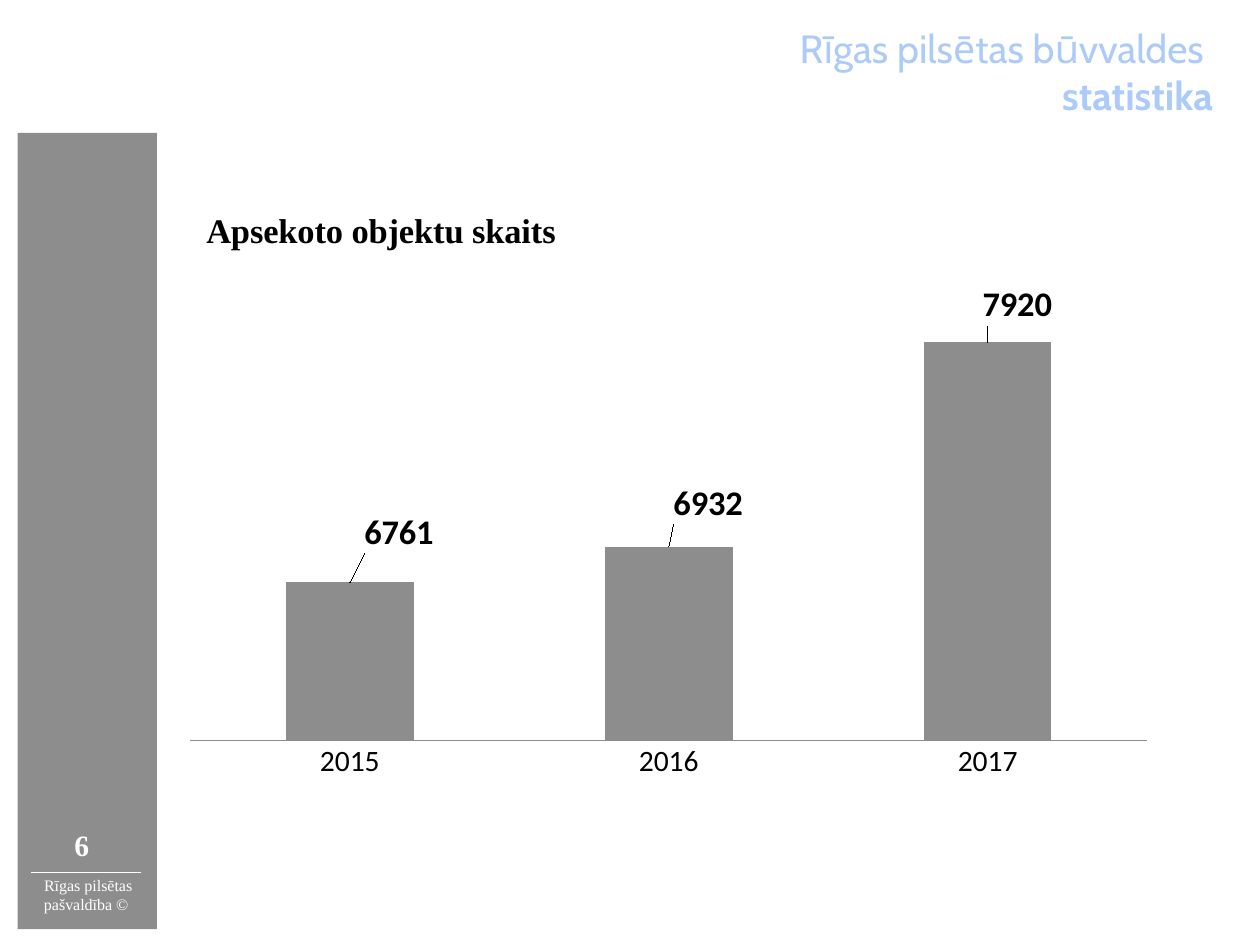
"""Build the slide on the number of surveyed objects per year."""
import pptx
import pptx.chart.data
import pptx.dml.color
import pptx.enum.chart
import pptx.enum.shapes
import pptx.enum.text
import pptx.oxml
import pptx.oxml.ns
import pptx.util

Inches = pptx.util.Inches
COLORS = {"grey": "8C8D8C", "white": "FFFFFF", "blue": "ACCBF9", "black": "000000"}
SERIF = "Times New Roman"


def style(font, name, size, color, bold=False):
    font.name, font.size, font.bold = name, pptx.util.Pt(size), bold
    font.color.rgb = pptx.dml.color.RGBColor.from_string(COLORS[color])


def layout(x, y, w=None, h=None):
    tags = ""
    if w is not None:
        tags = '<c:layoutTarget val="inner"/>'
    if w is not None or y > 0:
        tags += '<c:xMode val="edge"/><c:yMode val="edge"/>'
    for tag, value in zip("xywh", (x, y, w, h)):
        if value is not None:
            tags += f'<c:{tag} val="{value}"/>'
    return pptx.oxml.parse_xml(
        f'<c:layout {pptx.oxml.ns.nsdecls("c")}><c:manualLayout>{tags}</c:manualLayout></c:layout>')


prs = pptx.Presentation()
prs.slide_width, prs.slide_height = Inches(14.22), Inches(10.67)
s = prs.slides.add_slide(prs.slide_layouts[5])

bar = s.shapes.add_shape(pptx.enum.shapes.MSO_SHAPE.RECTANGLE,
                         Inches(0.2), Inches(1.5), Inches(1.57), Inches(8.99))
bar.shadow.inherit = False
bar.fill.solid()
bar.fill.fore_color.rgb = pptx.dml.color.RGBColor.from_string(COLORS["grey"])
bar.line.fill.background()

footer = s.shapes.add_textbox(Inches(0.21), Inches(9.88), Inches(1.57), Inches(0.44))
tf = footer.text_frame
tf.word_wrap = True
tf.margin_left = tf.margin_right = tf.margin_top = tf.margin_bottom = 0
tf.vertical_anchor = pptx.enum.text.MSO_ANCHOR.MIDDLE
p = tf.paragraphs[0]
p.text = "Rīgas pilsētas pašvaldība © "
p.alignment = pptx.enum.text.PP_ALIGN.CENTER
style(p.runs[0].font, SERIF, 13, "white")

rule = s.shapes.add_connector(pptx.enum.shapes.MSO_CONNECTOR.STRAIGHT,
                              Inches(0.35), Inches(9.85), Inches(1.59), Inches(9.85))
rule.line.color.rgb = pptx.dml.color.RGBColor.from_string(COLORS["white"])
rule.line.width = pptx.util.Pt(1)
rule._element.spPr.append(
    pptx.oxml.parse_xml(f'<a:effectLst {pptx.oxml.ns.nsdecls("a")}/>'))

title = s.shapes.title
title.left, title.top, title.width, title.height = (
    Inches(2.86), Inches(0.21), Inches(10.89), Inches(1.42))
tf = title.text_frame
tf.margin_left = tf.margin_right = tf.margin_top = tf.margin_bottom = Inches(0.06)
tf.auto_size = pptx.enum.text.MSO_AUTO_SIZE.NONE
tf.vertical_anchor = pptx.enum.text.MSO_ANCHOR.TOP
p = tf.paragraphs[0]
p.text = "Rīgas pilsētas būvvaldes \vstatistika"
p.alignment = pptx.enum.text.PP_ALIGN.RIGHT
for r, bold in zip(p.runs, (False, True)):
    style(r.font, "Cabin", 32, "blue", bold)

number = s.shapes.add_textbox(Inches(0.74), Inches(9.29), Inches(0.46), Inches(0.51))
tf = number.text_frame
tf.word_wrap = False
p = tf.paragraphs[0]
p.text = "6"
style(p.runs[0].font, SERIF, 24, "white", True)

data = pptx.chart.data.CategoryChartData()
data.categories = ["2015", "2016", "2017"]
data.add_series("Series 1", (6761, 6932, 7920))
chart = s.shapes.add_chart(
    pptx.enum.chart.XL_CHART_TYPE.COLUMN_CLUSTERED,
    Inches(2.07), Inches(2.1), Inches(11.1), Inches(7.09), data).chart
style(chart.font, SERIF, 10, "black")
chart.has_legend = False

p = chart.chart_title.text_frame.paragraphs[0]
p.text = "Apsekoto objektu skaits"
style(p.runs[0].font, SERIF, 28, "black", True)
heading = chart.chart_title._element
heading.find(pptx.oxml.ns.qn("c:tx")).addnext(layout(0.017, 0.027))
for old in heading.findall(pptx.oxml.ns.qn("c:layout"))[1:]:
    heading.remove(old)
chart.chart_title.include_in_layout = False

plot_area = chart._chartSpace.chart.plotArea
for old in plot_area.findall(pptx.oxml.ns.qn("c:layout")):
    plot_area.remove(old)
plot_area.insert(0, layout(0.007, 0.057, 0.973, 0.826))

years = chart.category_axis
years.major_tick_mark = pptx.enum.chart.XL_TICK_MARK.NONE
style(years.tick_labels.font, "Calibri", 24, "black")
years.format.line.color.rgb = pptx.dml.color.RGBColor.from_string(COLORS["grey"])
values = chart.value_axis
values.minimum_scale, values.maximum_scale = 6000, 8500
values.has_major_gridlines = False
values.visible = False

plot = chart.plots[0]
plot.gap_width = 150
plot.vary_by_categories = False
series = plot.series[0]
series.format.fill.solid()
series.format.fill.fore_color.rgb = pptx.dml.color.RGBColor.from_string(COLORS["grey"])
series.data_labels.show_value = True
style(series.data_labels.font, "Calibri", 28, "black", True)
for i, (dx, dy) in enumerate([(0.05, -0.04), (0.04, -0.03), (0.03, -0.02)]):
    label = series.points[i].data_label
    style(label.font, "Calibri", 28, "black", True)
    label.position = pptx.enum.chart.XL_LABEL_POSITION.OUTSIDE_END
    series.data_labels._element.findall(pptx.oxml.ns.qn("c:dLbl"))[i].find(
        pptx.oxml.ns.qn("c:idx")).addnext(layout(dx, dy))

prs.save("out.pptx")
